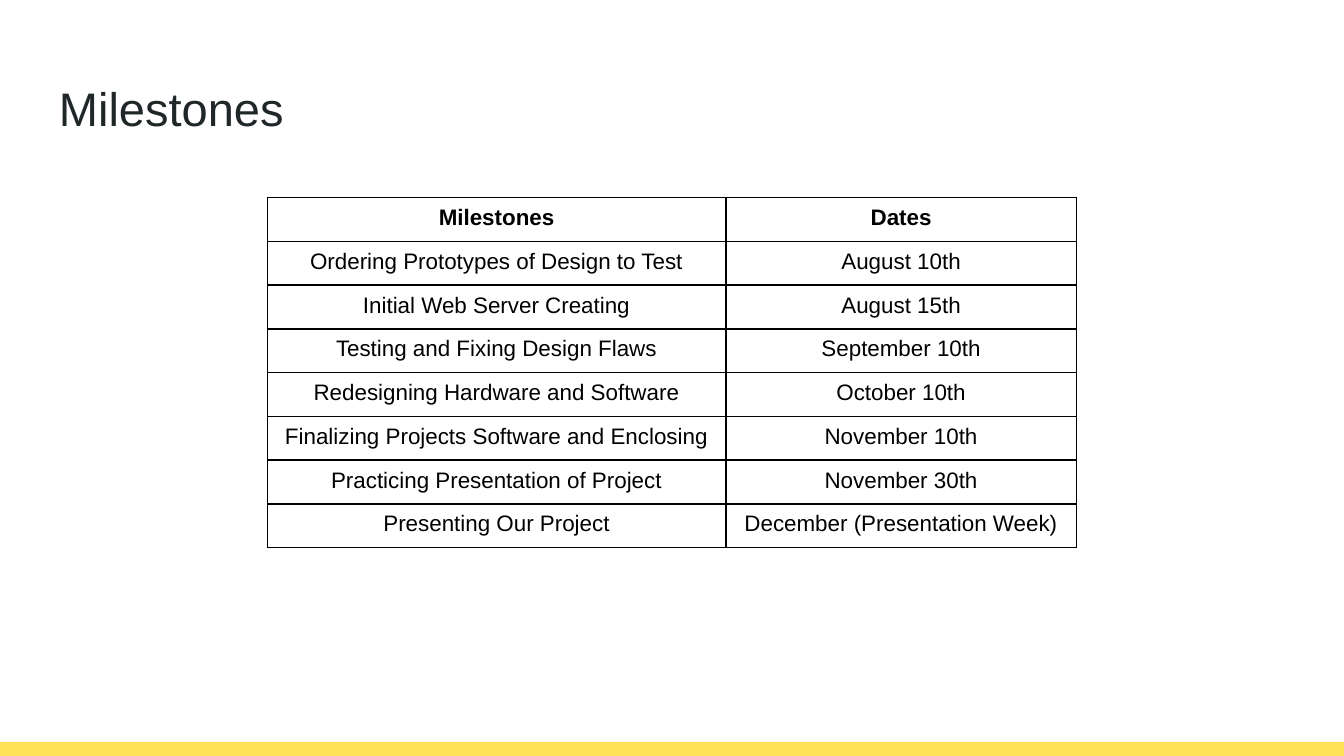
from lxml import etree
from pptx import Presentation
from pptx import util as u
from pptx.dml.color import RGBColor
from pptx.enum import shapes, text
from pptx.oxml import ns

COLORS = {"bar": "FFE255", "title": "202729", "table": "000000"}
TITLE_FORMAT = {"name": "Arial", "size": u.Pt(25.2), "bold": False}
BODY_FORMAT = {"name": "Arial", "size": u.Pt(12), "bold": False}
HEADER_FORMAT = {**BODY_FORMAT, "bold": True}
MARGINS = ("margin_left", "margin_top", "margin_right", "margin_bottom")
SLIDE_WIDTH = 10
COLUMN_WIDTHS = (3.41, 2.61)
ROW_HEIGHT = 0.32
MILESTONES = [
    ("Milestones", "Dates"),
    ("Ordering Prototypes of Design to Test", "August 10th"),
    ("Initial Web Server Creating", "August 15th"),
    ("Testing and Fixing Design Flaws", "September 10th"),
    ("Redesigning Hardware and Software", "October 10th"),
    ("Finalizing Projects Software and Enclosing", "November 10th"),
    ("Practicing Presentation of Project", "November 30th"),
    ("Presenting Our Project", "December (Presentation Week)"),
]


def color(name):
    return RGBColor.from_string(COLORS[name])


def set_margins(target, inches):
    for margin in MARGINS:
        setattr(target, margin, u.Inches(inches))


def write_text(paragraph, words, font_format, color_name):
    run = paragraph.add_run()
    run.text = words
    for attribute, value in font_format.items():
        setattr(run.font, attribute, value)
    run.font.color.rgb = color(color_name)


def add_bar(slide):
    bar = slide.shapes.add_shape(
        shapes.MSO_SHAPE.RECTANGLE,
        u.Inches(0), u.Inches(5.52), u.Inches(SLIDE_WIDTH), u.Inches(0.11))
    bar.shadow.inherit = False
    bar.fill.solid()
    bar.fill.fore_color.rgb = color("bar")
    bar.line.fill.background()


def add_title(slide, words):
    box = slide.shapes.add_textbox(
        u.Inches(0.34), u.Inches(0.49), u.Inches(9.32), u.Inches(0.63))
    frame = box.text_frame
    frame.word_wrap = True
    frame.vertical_anchor = text.MSO_ANCHOR.MIDDLE
    set_margins(frame, 0.1)
    write_text(frame.paragraphs[0], words, TITLE_FORMAT, "title")


def add_borders(cell):
    """Draw a 1 pt line on each side; lines must precede the cell's fill."""
    properties = cell._tc.get_or_add_tcPr()
    for position, side in enumerate(("lnL", "lnR", "lnT", "lnB")):
        line = etree.Element(ns.qn(f"a:{side}"), w=str(u.Pt(1)))
        fill = etree.SubElement(line, ns.qn("a:solidFill"))
        etree.SubElement(fill, ns.qn("a:srgbClr"), val=COLORS["table"])
        properties.insert(position, line)


def fill_cell(cell, words, font_format):
    cell.fill.background()
    set_margins(cell, 0.07)
    add_borders(cell)
    paragraph = cell.text_frame.paragraphs[0]
    paragraph.alignment = text.PP_ALIGN.CENTER
    paragraph.line_spacing = 0.93
    write_text(paragraph, words, font_format, "table")


def add_milestone_table(slide):
    table = slide.shapes.add_table(
        len(MILESTONES), len(COLUMN_WIDTHS), u.Inches(1.99), u.Inches(1.47),
        u.Inches(sum(COLUMN_WIDTHS)),
        u.Inches(ROW_HEIGHT * len(MILESTONES))).table
    table.horz_banding = False
    for column, width in zip(table.columns, COLUMN_WIDTHS):
        column.width = u.Inches(width)
    for row_index, entries in enumerate(MILESTONES):
        font_format = BODY_FORMAT if row_index else HEADER_FORMAT
        for column_index, words in enumerate(entries):
            fill_cell(table.cell(row_index, column_index), words, font_format)


def main():
    presentation = Presentation()
    presentation.slide_width = u.Inches(SLIDE_WIDTH)
    presentation.slide_height = u.Inches(SLIDE_WIDTH * 9 / 16)
    slide = presentation.slides.add_slide(presentation.slide_layouts[6])
    add_bar(slide)
    add_title(slide, "Milestones")
    add_milestone_table(slide)
    presentation.save("out.pptx")


if __name__ == "__main__":
    main()
